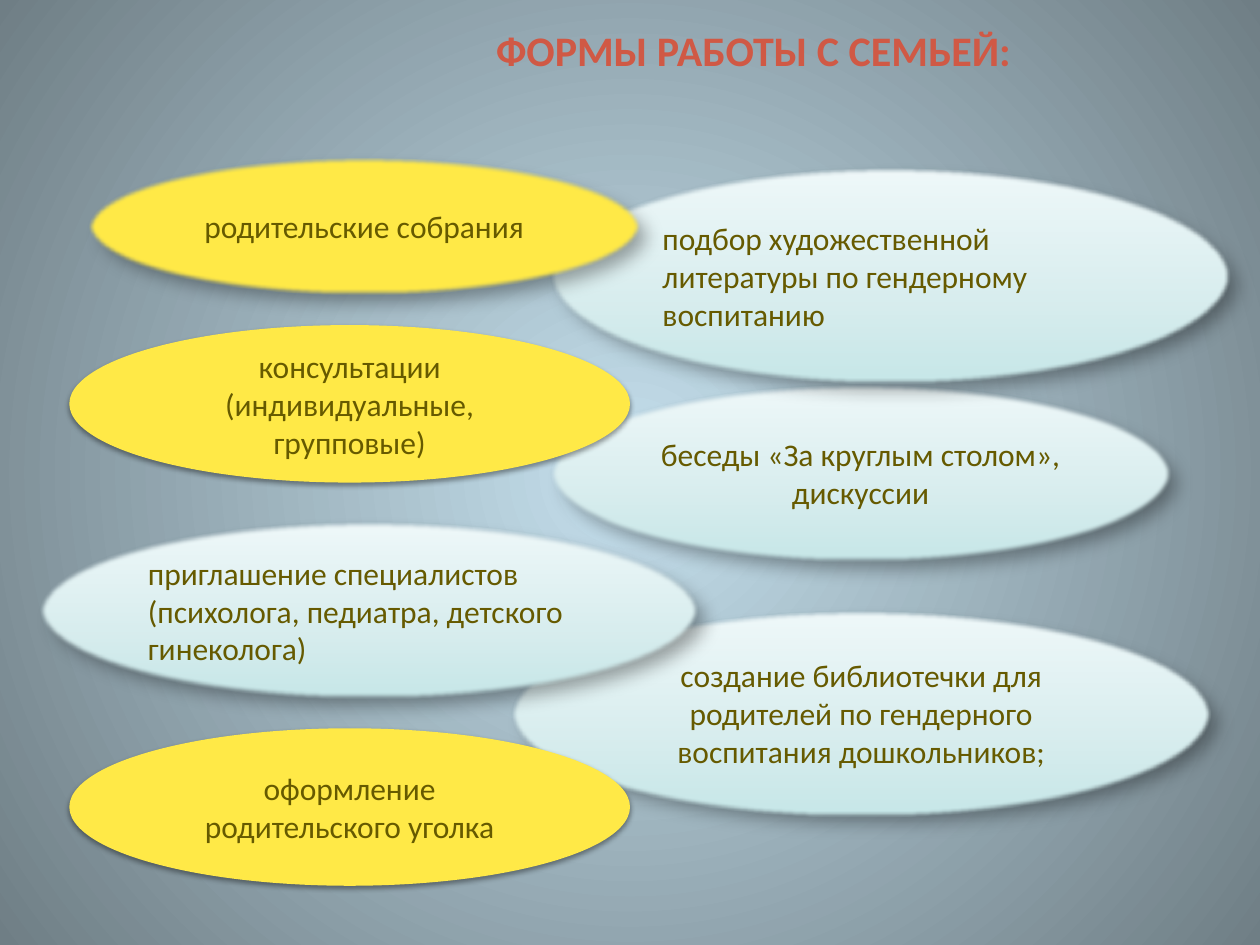
from dataclasses import dataclass

import pptx
import pptx.dml.color
import pptx.enum.shapes
import pptx.enum.text
import pptx.oxml
import pptx.oxml.ns
import pptx.util

Inches = pptx.util.Inches
Pt = pptx.util.Pt
RGB = pptx.dml.color.RGBColor.from_string
qn = pptx.oxml.ns.qn
ALIGN = pptx.enum.text.PP_ALIGN
NS = pptx.oxml.ns.nsdecls("a")


@dataclass(frozen=True)
class Theme:
    font: str = "Calibri"
    title_size: int = 24
    body_size: int = 18
    text: str = "665A00"
    yellow: str = "FFE947"
    outline: str = "88AAAB"
    pale: tuple = ((0, "C5E6E7"), (35, "D6ECED"), (100, "EFF8F9"))
    backdrop: tuple = ((0, "C5E0ED"), (100, "6F7E85"))
    heading: tuple = ((0, "DA7B6D"), (49, "D05945"), (50, "BE482C"),
                      (92, "A5432C"), (100, "A2422B"))
    deep_shadow: tuple = (35, 10.2, 8, 45)
    flat_shadow: tuple = (38, 3.1, 1.6, 90)
    soft_edge: float = 2.5


THEME = Theme()
CENTER, LEFT = ALIGN.CENTER, ALIGN.LEFT


def apply_gradient(fill, owner, stops, angle=None):
    fill.gradient()
    gradient = next(owner.iter(qn("a:gradFill")))
    for child in list(gradient):
        gradient.remove(child)
    colours = "".join(
        f'<a:gs pos="{position * 1000}"><a:srgbClr val="{colour}"/></a:gs>'
        for position, colour in stops)
    gradient.append(pptx.oxml.parse_xml(f"<a:gsLst {NS}>{colours}</a:gsLst>"))
    if angle is None:
        direction = (f'<a:path {NS} path="circle"><a:fillToRect l="50000" '
                     't="50000" r="50000" b="50000"/></a:path>')
    else:
        direction = f'<a:lin {NS} ang="{angle * 60000}" scaled="0"/>'
    gradient.append(pptx.oxml.parse_xml(direction))


def apply_effects(shape, shadow, soft_edge):
    alpha, blur, distance, angle = shadow
    shape.shadow.inherit = False
    effects = shape.element.spPr.find(qn("a:effectLst"))
    effects.append(pptx.oxml.parse_xml(
        f'<a:outerShdw {NS} blurRad="{Pt(blur)}" dist="{Pt(distance)}" '
        f'dir="{angle * 60000}" rotWithShape="0"><a:srgbClr val="000000">'
        f'<a:alpha val="{alpha * 1000}"/></a:srgbClr></a:outerShdw>'))
    if soft_edge:
        effects.append(pptx.oxml.parse_xml(
            f'<a:softEdge {NS} rad="{Pt(THEME.soft_edge)}"/>'))


def write_text(shape, text, size, align):
    frame = shape.text_frame
    frame.text = text
    frame.word_wrap = True
    frame.vertical_anchor = pptx.enum.text.MSO_ANCHOR.MIDDLE
    paragraph = frame.paragraphs[0]
    paragraph.alignment = align
    run = paragraph.runs[0]
    run.font.name = THEME.font
    run.font.size = Pt(size)
    return run


def add_title(slide, text):
    title = slide.shapes.title
    title.left, title.top = Inches(1.48), Inches(-0.23)
    title.width, title.height = Inches(9), Inches(1.25)
    run = write_text(title, text, THEME.title_size, CENTER)
    run.font.bold = True
    apply_gradient(run.font.fill, title.element, THEME.heading, 90)


def add_form(slide, box, text, align=CENTER, yellow=False, soft=True):
    oval = slide.shapes.add_shape(
        pptx.enum.shapes.MSO_SHAPE.OVAL, *map(Inches, box))
    if yellow:
        oval.fill.solid()
        oval.fill.fore_color.rgb = RGB(THEME.yellow)
    else:
        apply_gradient(oval.fill, oval.element, THEME.pale, 270)
    if soft:
        oval.line.color.rgb = RGB(THEME.outline)
        oval.line.width = Pt(0.75)
    else:
        oval.line.fill.background()
    apply_effects(oval, THEME.deep_shadow if soft else THEME.flat_shadow, soft)
    run = write_text(oval, text, THEME.body_size, align)
    run.font.color.rgb = RGB(THEME.text)


def main():
    deck = pptx.Presentation()
    deck.slide_width, deck.slide_height = Inches(10), Inches(7.5)
    slide = deck.slides.add_slide(deck.slide_layouts.get_by_name("Title Only"))
    apply_gradient(slide.background.fill, slide.element, THEME.backdrop)
    add_title(slide, "ФОРМЫ РАБОТЫ С СЕМЬЕЙ:")

    add_form(slide, (4.06, 4.84, 5.55, 1.64),
             "создание библиотечки для родителей по гендерного воспитания дошкольников;")
    add_form(slide, (4.37, 3.05, 4.92, 1.41),
             "беседы «За круглым столом», дискуссии")
    add_form(slide, (4.37, 1.33, 5.39, 1.72),
             "подбор художественной литературы по гендерному воспитанию", LEFT)
    add_form(slide, (0.55, 2.58, 4.45, 1.25),
             "консультации (индивидуальные, групповые)", yellow=True, soft=False)
    add_form(slide, (0.7, 1.25, 4.38, 1.09),
             "родительские собрания", yellow=True)
    add_form(slide, (0.55, 5.78, 4.45, 1.25),
             "оформление родительского уголка", yellow=True, soft=False)
    add_form(slide, (0.31, 4.14, 5.23, 1.41),
             "приглашение специалистов (психолога, педиатра, детского гинеколога)", LEFT)
    deck.save("out.pptx")


if __name__ == "__main__":
    main()
